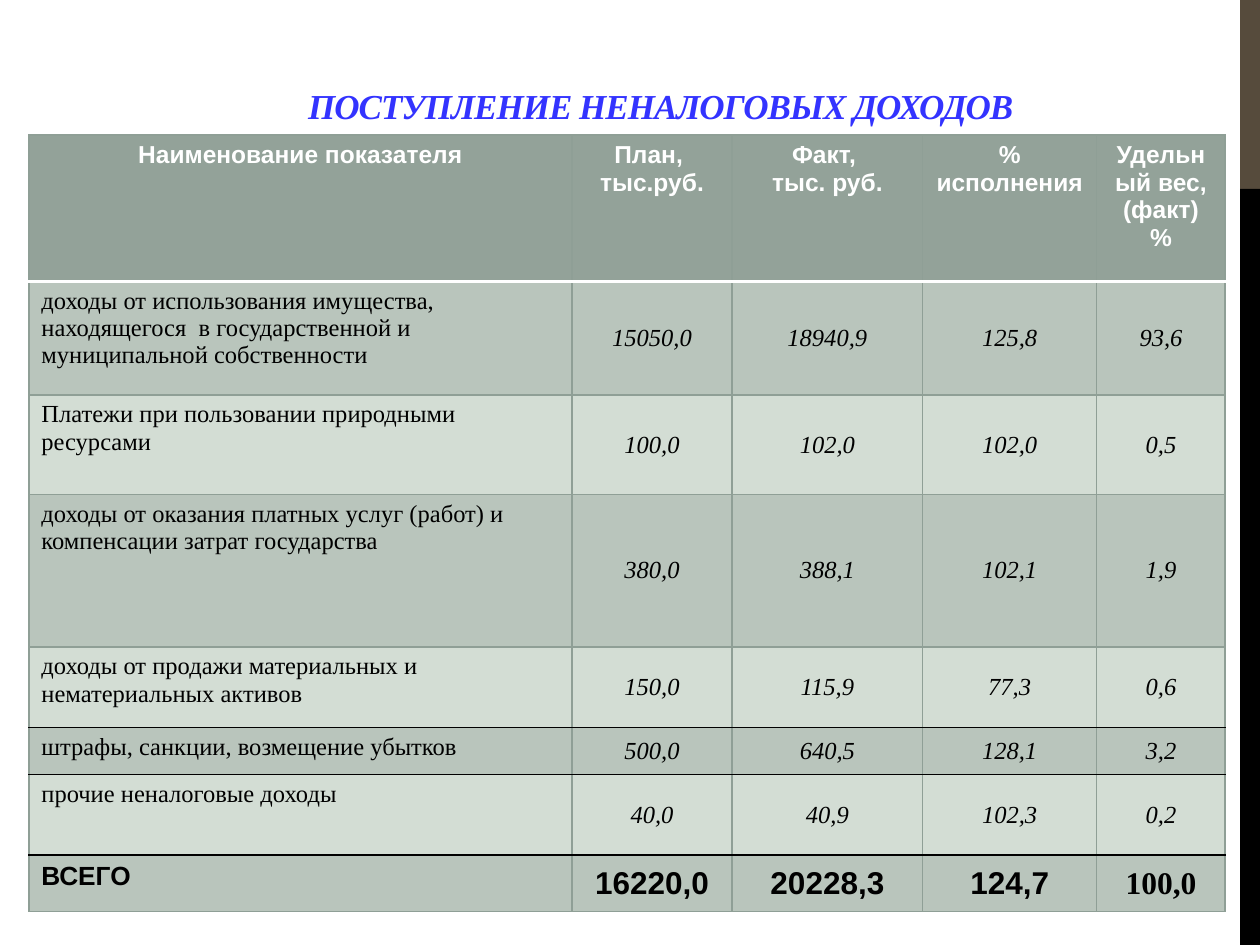
from lxml.etree import SubElement
from pptx import Presentation
from pptx.dml.color import RGBColor
from pptx.enum.shapes import MSO_SHAPE
from pptx.enum.text import MSO_ANCHOR, PP_ALIGN
from pptx.oxml.ns import qn
from pptx.util import Cm, Pt

SERIF, SANS = "Times New Roman", "Arial"
GREY, WHITE, BLACK = "8F9F96", "FFFFFF", "000000"


def paint(fmt, color):
    if hasattr(fmt, "solid"):
        fmt.solid()
        fmt = fmt.fore_color
    else:
        fmt = fmt.color
    fmt.rgb = RGBColor.from_string(color)


def add_border(cell, side, color, width):
    ln = SubElement(cell._tc.get_or_add_tcPr(), qn(f"a:ln{side}"), w=str(Pt(width)))
    fill = SubElement(ln, qn("a:solidFill"))
    SubElement(fill, qn("a:srgbClr"), val=color)


prs = Presentation()
prs.slide_width, prs.slide_height = Cm(25.4), Cm(19.05)
s = prs.slides.add_slide(prs.slide_layouts[5])

for top, height, color in [(0, 3.81, "564B3C"), (3.81, 15.24, BLACK)]:
    sp = s.shapes.add_shape(MSO_SHAPE.RECTANGLE, Cm(25), Cm(top), Cm(0.4), Cm(height))
    sp.shadow.inherit = False
    paint(sp.fill, color)
    sp.line.fill.background()

title = s.shapes.title
title.left, title.top, title.width, title.height = Cm(3.51), Cm(1.12), Cm(19.61), Cm(2.01)
tf = title.text_frame
tf.vertical_anchor = MSO_ANCHOR.MIDDLE
p = tf.paragraphs[0]
p.alignment = PP_ALIGN.CENTER
r = p.add_run()
r.text = "ПОСТУПЛЕНИЕ НЕНАЛОГОВЫХ ДОХОДОВ"
r.font.name, r.font.size, r.font.bold, r.font.italic = SERIF, Pt(20), True, True
paint(r.font, "3333FF")
r.font._element.set("spc", "-60")

rows = [
    ["Наименование показателя", "План, \nтыс.руб.", "Факт, \nтыс. руб.",
     "% исполнения", "Удельный вес, (факт) %"],
    ["доходы от использования имущества, находящегося  в государственной "
     "и муниципальной собственности", "15050,0", "18940,9", "125,8", "93,6"],
    ["Платежи при пользовании природными ресурсами", "100,0", "102,0", "102,0", "0,5"],
    ["доходы от оказания платных услуг (работ) и компенсации затрат государства",
     "380,0", "388,1", "102,1", "1,9"],
    ["доходы от продажи материальных и нематериальных активов",
     "150,0", "115,9", "77,3", "0,6"],
    ["штрафы, санкции, возмещение убытков", "500,0", "640,5", "128,1", "3,2"],
    ["прочие неналоговые доходы", "40,0", "40,9", "102,3", "0,2"],
    ["ВСЕГО", "16220,0", "20228,3", "124,7", "100,0"],
]
col_widths = [10.95, 3.23, 3.84, 3.51, 2.59]
row_heights = [2.95, 2.29, 2.01, 3.07, 1.63, 0.94, 1.63, 1.14]
row_edges = [(GREY, 1), (WHITE, 2.25)] + [(GREY, 1)] * 3 + [(BLACK, 1)] * 3 + [(GREY, 1)]
last = len(rows) - 1

table = s.shapes.add_table(len(rows), len(col_widths), Cm(0.58), Cm(2.72),
                           Cm(sum(col_widths)), Cm(sum(row_heights))).table
for col, width in zip(table.columns, col_widths):
    col.width = Cm(width)
for row, height in zip(table.rows, row_heights):
    row.height = Cm(height)

for i, texts in enumerate(rows):
    header, total = i == 0, i == last
    for j, text in enumerate(texts):
        cell = table.cell(i, j)
        number = j > 0 and not header
        for side, edge in zip("LRTB", [(GREY, 1), (GREY, 1), row_edges[i], row_edges[i + 1]]):
            add_border(cell, side, *edge)
        paint(cell.fill, "93A299" if header else "B9C5BC" if i % 2 else "D3DDD4")
        cell.vertical_anchor = MSO_ANCHOR.MIDDLE if number else MSO_ANCHOR.TOP

        size = 14
        if total:
            cell.fill.fore_color.rgb = RGBColor.from_string("B9C5BC")
            size = 18 if number else 15
        sans = header or (total and j < len(texts) - 1)
        tf = cell.text_frame
        for k, line in enumerate(text.split("\n")):
            p = tf.add_paragraph() if k else tf.paragraphs[0]
            p.alignment = PP_ALIGN.CENTER if header or number else PP_ALIGN.LEFT
            r = p.add_run()
            r.text = line
            r.font.name, r.font.size = SANS if sans else SERIF, Pt(size)
            r.font.bold = header or total
            r.font.italic = number and not total
            paint(r.font, WHITE if header else BLACK)

prs.save("out.pptx")
